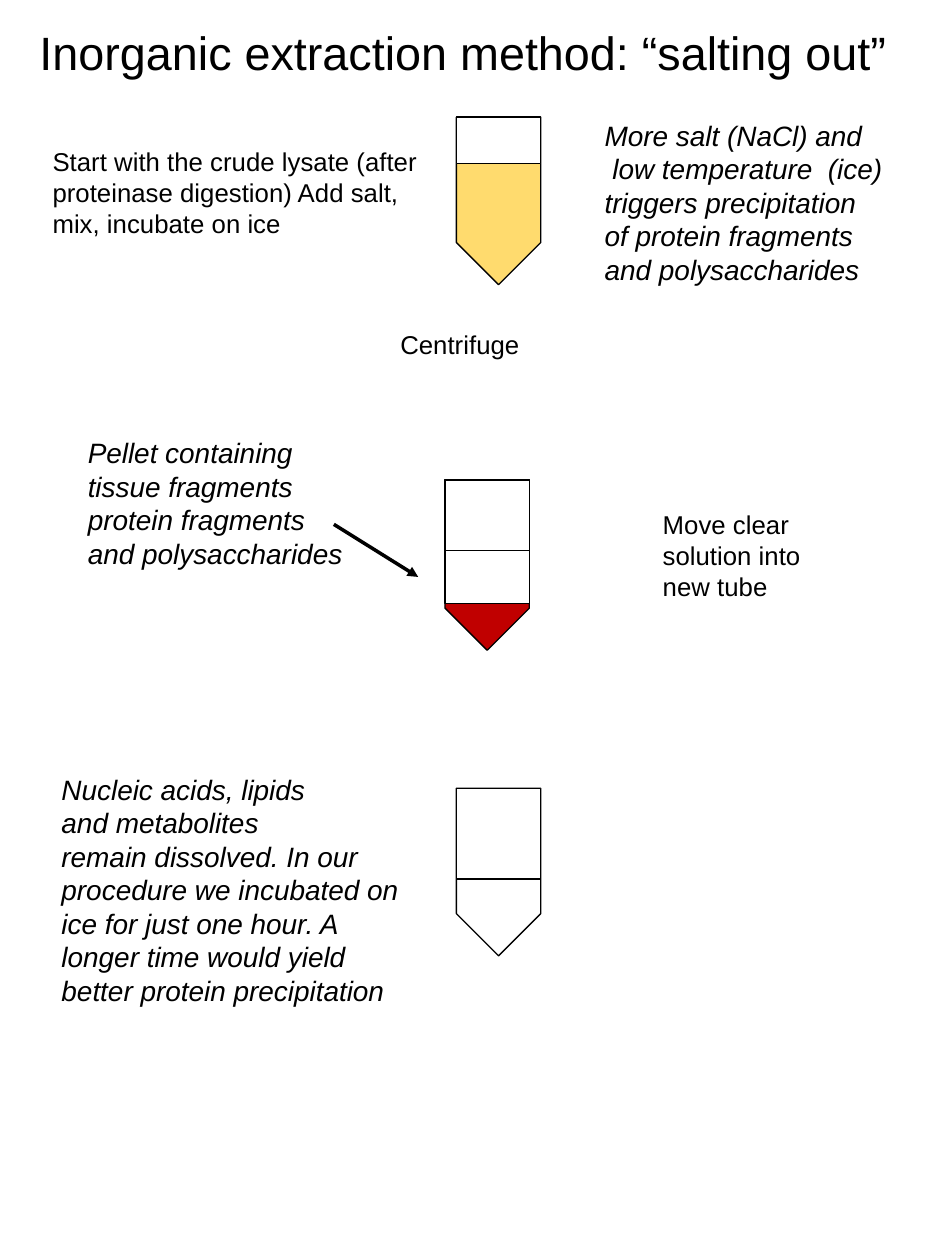
from lxml import etree
from pptx import Presentation
from pptx.dml.color import RGBColor
from pptx.enum.shapes import MSO_CONNECTOR, MSO_SHAPE
from pptx.enum.text import MSO_AUTO_SIZE, PP_ALIGN
from pptx.oxml.ns import qn
from pptx.util import Cm, Pt

STRAIGHT = MSO_CONNECTOR.STRAIGHT
PLATE, RECT = MSO_SHAPE.PENTAGON, MSO_SHAPE.RECTANGLE
GROW = MSO_AUTO_SIZE.SHAPE_TO_FIT_TEXT
LEFT, CENTER = PP_ALIGN.LEFT, PP_ALIGN.CENTER

FONT = "Arial"
BLACK, WHITE, YELLOW, RED = "000000", "FFFFFF", "FFC000", "C00000"
TUBE_W, TUBE_H = 1.7, 3.38
STEP, NOTE, TITLE = 14.7, 16, 26.7


def color(code):
    return RGBColor.from_string(code)


def add_text(slide, box, lines, size, italic=False, align=LEFT):
    """Add a text box with one paragraph per line."""
    frame = slide.shapes.add_textbox(*map(Cm, box)).text_frame
    frame.word_wrap = True
    frame.auto_size = GROW
    for i, line in enumerate(lines):
        para = frame.add_paragraph() if i else frame.paragraphs[0]
        para.alignment = align
        run = para.add_run()
        run.text = line
        font = run.font
        font.name, font.size, font.italic = FONT, Pt(size), italic
        font.color.rgb = color(BLACK)


def add_part(group, kind, box, fill):
    part = group.shapes.add_shape(kind, *map(Cm, box))
    part.shadow.inherit = False
    part.fill.solid()
    part.fill.fore_color.rgb = color(fill)
    part.line.color.rgb = color(BLACK)
    part.line.width = Pt(0.75)
    return part


def add_tube(slide, left, top, fill, caps, lift=0, alpha=None):
    """Draw a pointed tube; caps are the heights of the white layers."""
    group = slide.shapes.add_group_shape()
    shift = (TUBE_H - TUBE_W) / 2
    box = left - shift, top + shift, TUBE_H, TUBE_W
    body = add_part(group, PLATE, box, fill)
    body.rotation = 90
    if alpha:
        tint = body.fill._xPr.find(qn("a:solidFill"))[0]
        etree.SubElement(tint, qn("a:alpha"), val=str(alpha * 1000))
    for high in caps:
        add_part(group, RECT, (left, top - lift, TUBE_W, high), WHITE)


def add_arrow(slide, start, end):
    arrow = slide.shapes.add_connector(STRAIGHT, *map(Cm, start + end))
    arrow.line.color.rgb = color(BLACK)
    arrow.line.width = Pt(2)
    etree.SubElement(arrow.line._get_or_add_ln(), qn("a:tailEnd"), type="triangle")
    etree.SubElement(arrow._element.spPr, qn("a:effectLst"))


def main():
    deck = Presentation()
    deck.slide_width, deck.slide_height = Cm(19.05), Cm(25.4)
    slide = deck.slides.add_slide(deck.slide_layouts[6])

    add_text(slide, (0.25, 0.36, 18.2, 1.4),
             ["Inorganic extraction method: “salting out”"], TITLE, align=CENTER)

    add_tube(slide, 9.2, 2.36, YELLOW, [0.94], alpha=57)
    add_text(slide, (0.81, 2.82, 8.38, 2.13),
             ["Start with the crude lysate (after proteinase digestion) Add salt,",
              "mix, incubate on ice"], STEP)
    add_text(slide, (11.94, 2.26, 7.11, 3.68),
             ["More salt (NaCl) and", " low temperature  (ice)",
              "triggers precipitation", "of protein fragments",
              "and polysaccharides"], NOTE, italic=True)

    add_text(slide, (7.82, 6.5, 3.38, 0.89), ["Centrifuge"], STEP)

    add_tube(slide, 8.97, 9.73, RED, [2.49, 1.42], lift=0.05)
    add_text(slide, (1.52, 8.66, 6.38, 3),
             ["Pellet containing", "tissue fragments", "protein fragments",
              "and polysaccharides"], NOTE, italic=True)
    add_arrow(slide, (6.73, 10.57), (8.43, 11.63))
    add_text(slide, (13.11, 10.13, 3.66, 2.13),
             ["Move clear", "solution into", "new tube"], STEP)

    add_tube(slide, 9.2, 15.89, WHITE, [1.83])
    add_text(slide, (0.99, 15.44, 7.44, 5.05),
             ["Nucleic acids, lipids", "and metabolites",
              "remain dissolved. In our procedure we incubated on ice for just "
              "one hour. A longer time would yield better protein precipitation"],
             NOTE, italic=True)

    deck.save("out.pptx")


if __name__ == "__main__":
    main()
